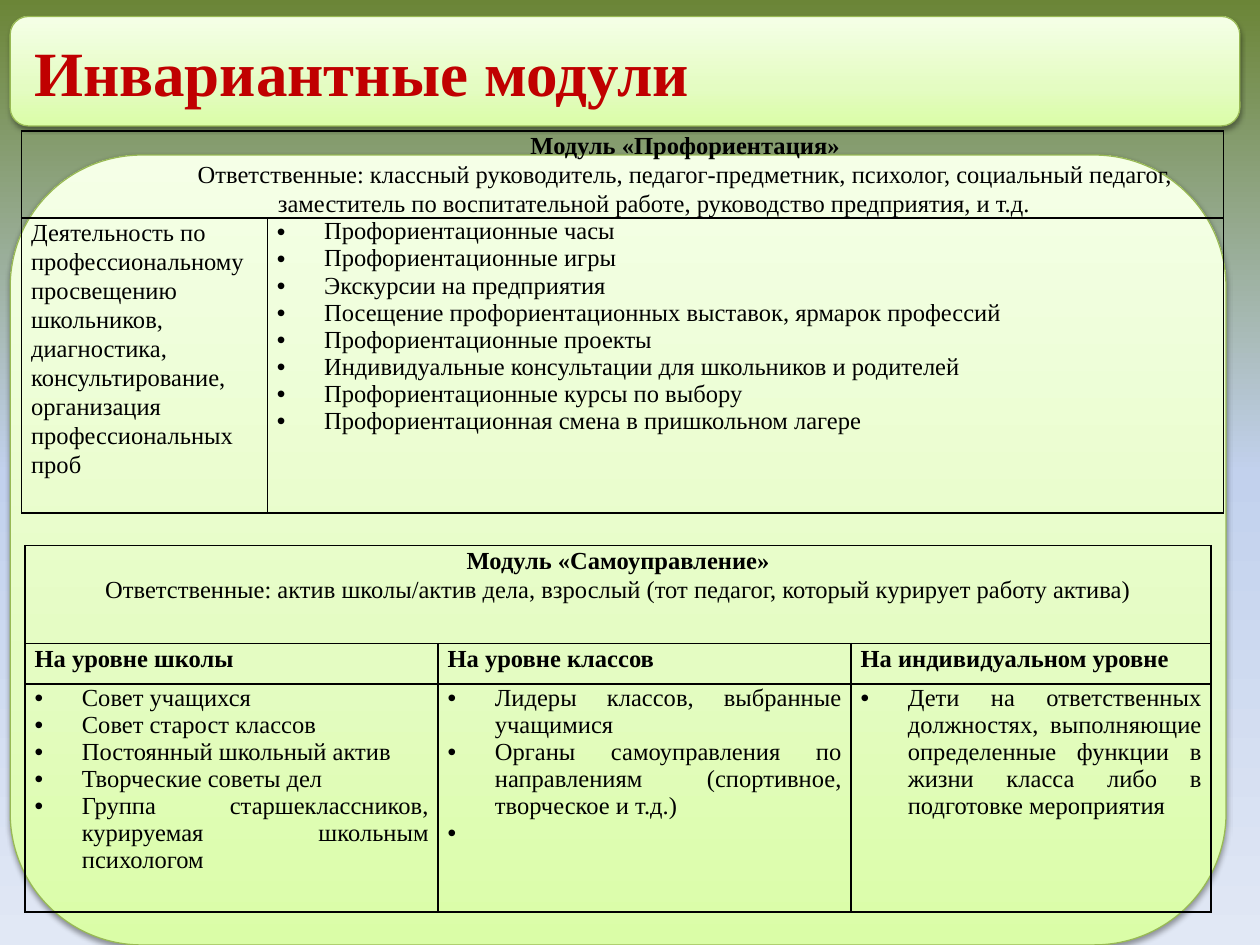
from lxml.etree import SubElement
from pptx import Presentation
from pptx.dml.color import RGBColor
from pptx.enum.shapes import MSO_SHAPE
from pptx.enum.text import MSO_ANCHOR, PP_ALIGN
from pptx.oxml.ns import qn
from pptx.util import Pt

HUES = {
    "black": "000000", "red": "C00000", "edge": "98B955",
    "lime": "DAFDA7", "mint": "E4FCC2", "pale": "F5FFE7",
    "moss": "6B8537", "sky": "C2D1ED", "haze": "E1E8F5",
}
FONT = "Times New Roman"
GLOW = [(0, "lime", 100), (35, "mint", 100), (100, "pale", 100)]
DUSK = [(0, "moss", 74), (50, "sky", 100), (100, "haze", 100)]


def tint(node, hue, alpha=100):
    clr = SubElement(node, qn("a:srgbClr"), val=HUES[hue])
    if alpha < 100:
        SubElement(clr, qn("a:alpha"), val=str(alpha * 1000))


def blend(fill, root, stops, angle):
    fill.gradient()
    fill.gradient_angle = angle
    group = next(root.iter(qn("a:gsLst")))
    for old in list(group):
        group.remove(old)
    for pos, hue, alpha in stops:
        tint(SubElement(group, qn("a:gs"), pos=str(pos * 1000)), hue, alpha)


def add_panel(slide, left, top, width, height):
    shape = slide.shapes.add_shape(
        MSO_SHAPE.ROUNDED_RECTANGLE, Pt(left), Pt(top), Pt(width), Pt(height))
    props = shape._element.spPr
    blend(shape.fill, props, GLOW, 90)
    shape.line.color.rgb = RGBColor.from_string(HUES["edge"])
    shape.line.width = Pt(0.75)
    shape.shadow.inherit = False
    shade = SubElement(
        props.find(qn("a:effectLst")), qn("a:outerShdw"), blurRad=str(Pt(3.1)),
        dist=str(Pt(1.6)), dir="5400000", rotWithShape="0")
    tint(shade, "black", 38)
    return shape


def add_run(para, text, size=14, bold=False, hue="black"):
    run = para.add_run()
    run.text = text
    run.font.name = FONT
    run.font.size = Pt(size)
    run.font.bold = bold
    run.font.color.rgb = RGBColor.from_string(HUES[hue])


def indent(para, left, first):
    props = para._p.get_or_add_pPr()
    props.set("marL", str(Pt(left)))
    props.set("indent", str(Pt(first)))
    return props


def add_paras(cell, texts):
    frame = cell.text_frame
    for i, text in enumerate(texts):
        para = frame.add_paragraph() if i else frame.paragraphs[0]
        yield para, text


def write(cell, texts, bold=False, align=PP_ALIGN.LEFT):
    for para, text in add_paras(cell, texts):
        para.alignment = align
        para.line_spacing = 1.07
        add_run(para, text, bold=bold)


def head(cell, title, note, left=0, first=0):
    for para, text in add_paras(cell, [title, note]):
        para.alignment = PP_ALIGN.CENTER
        para.line_spacing = 1.07
        indent(para, left, first)
        add_run(para, text, bold=text == title)


def bullets(cell, texts):
    for para, text in add_paras(cell, texts):
        para.alignment = PP_ALIGN.JUSTIFY
        props = indent(para, 27, -27)
        SubElement(props, qn("a:buFont"), typeface="Arial")
        SubElement(props, qn("a:buChar"), char="•")
        add_run(para, text)


def frame_cell(cell):
    cell.margin_left = cell.margin_right = Pt(5.4)
    cell.margin_top = cell.margin_bottom = 0
    props = cell._tc.get_or_add_tcPr()
    for side in ("lnL", "lnR", "lnT", "lnB"):
        line = SubElement(props, qn("a:" + side), w=str(Pt(1)))
        tint(SubElement(line, qn("a:solidFill")), "black")
    cell.fill.background()


def add_grid(slide, left, top, cols, rows):
    table = slide.shapes.add_table(
        len(rows), len(cols), Pt(left), Pt(top),
        Pt(sum(cols)), Pt(sum(rows))).table
    table.first_row = table.horz_banding = False
    for col, width in zip(table.columns, cols):
        col.width = Pt(width)
    for row, height in zip(table.rows, rows):
        row.height = Pt(height)
    for cell in table.iter_cells():
        frame_cell(cell)
    table.cell(0, 0).merge(table.cell(0, len(cols) - 1))
    return table


def add_title(slide):
    shape = add_panel(slide, 5.8, 9.4, 702.7, 62.6)
    frame = shape.text_frame
    frame.word_wrap = True
    frame.vertical_anchor = MSO_ANCHOR.MIDDLE
    para = frame.paragraphs[0]
    para.alignment = PP_ALIGN.LEFT
    para.space_before = Pt(7.2)
    para.space_after = Pt(3)
    indent(para, 3.6, 0)
    add_run(para, "Инвариантные модули", 36, True, "red")


def add_council(slide):
    table = add_grid(slide, 14.4, 311.8, [236, 236, 205.7], [56, 23.2, 130.3])
    head(table.cell(0, 0), "Модуль «Самоуправление»",
         "Ответственные: актив школы/актив дела, взрослый "
         "(тот педагог, который курирует работу актива)")
    levels = {
        "На уровне школы": [
            "Совет учащихся", "Совет старост классов",
            "Постоянный школьный актив", "Творческие советы дел",
            "Группа старшеклассников, курируемая школьным психологом"],
        "На уровне классов": [
            "Лидеры классов, выбранные учащимися",
            "Органы самоуправления по направлениям "
            "(спортивное, творческое и т.д.)",
            " "],
        "На индивидуальном уровне": [
            "Дети на ответственных должностях, выполняющие определенные "
            "функции в жизни класса либо в подготовке мероприятия"],
    }
    for col, (level, items) in enumerate(levels.items()):
        write(table.cell(1, col), [level], bold=True)
        bullets(table.cell(2, col), items)


def add_career(slide):
    table = add_grid(slide, 12.4, 74.9, [140.4, 546.5], [36, 168.5])
    head(table.cell(0, 0), "Модуль «Профориентация»",
         "Ответственные: классный руководитель, педагог-предметник, психолог, "
         "социальный педагог, заместитель по воспитательной работе, "
         "руководство предприятия, и т.д.", 36, 35.4)
    write(table.cell(1, 0), [
        "Деятельность по профессиональному просвещению школьников, "
        "диагностика, консультирование, организация профессиональных проб"])
    bullets(table.cell(1, 1), [
        "Профориентационные часы",
        "Профориентационные игры",
        "Экскурсии на предприятия",
        "Посещение профориентационных выставок, ярмарок профессий",
        "Профориентационные проекты",
        "Индивидуальные консультации для школьников и родителей",
        "Профориентационные курсы по выбору",
        "Профориентационная смена в пришкольном лагере"])


def main():
    deck = Presentation()
    deck.slide_width, deck.slide_height = Pt(720), Pt(540)
    slide = deck.slides.add_slide(deck.slide_layouts[6])
    blend(slide.background.fill, slide._element, DUSK, 270)
    add_title(slide)
    add_panel(slide, 5.8, 88.6, 694.8, 451.4)
    add_council(slide)
    add_career(slide)
    deck.save("out.pptx")


if __name__ == "__main__":
    main()
